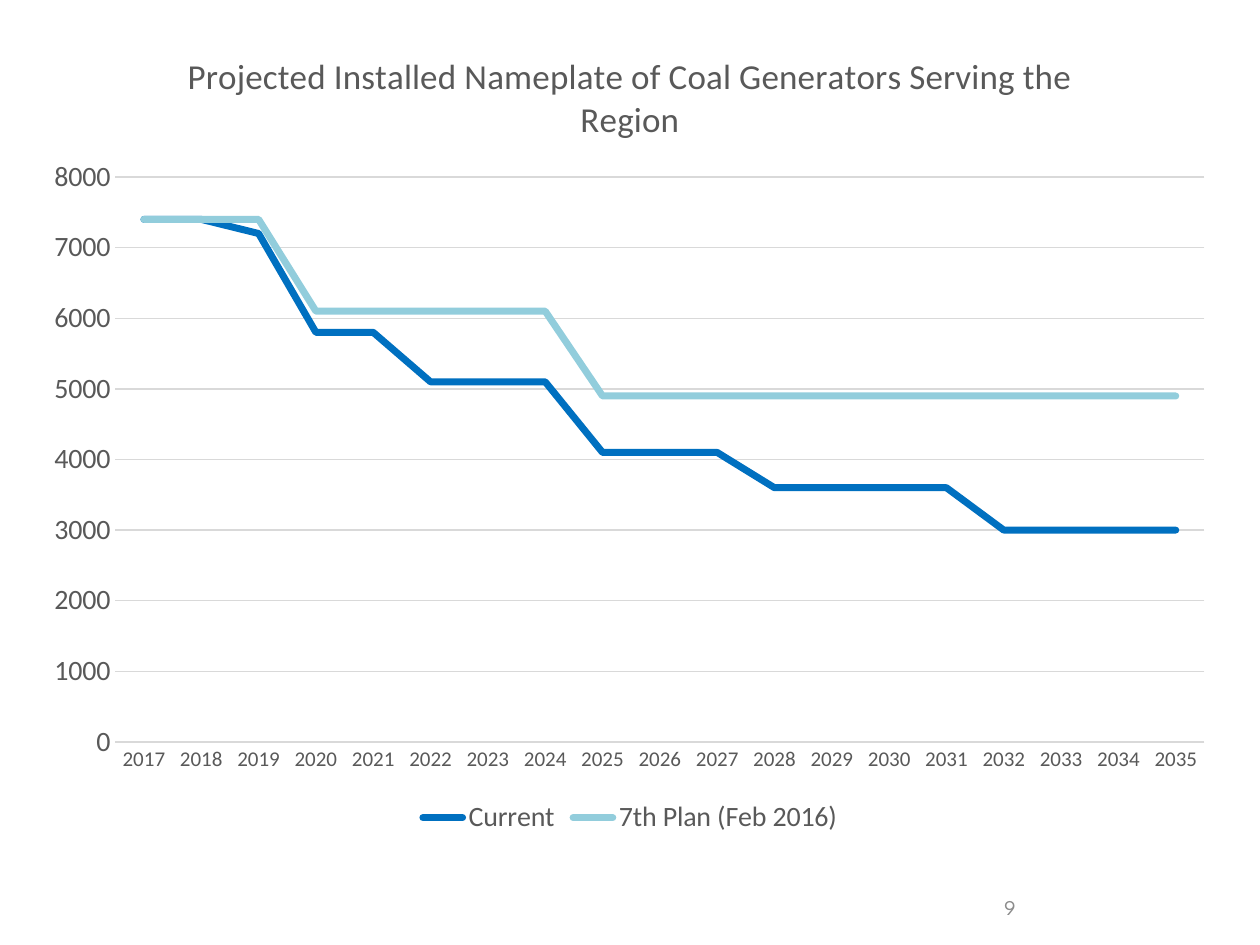
from lxml import etree
from pptx import Presentation
from pptx.chart.data import CategoryChartData
from pptx.dml.color import RGBColor
from pptx.enum.chart import XL_CHART_TYPE, XL_LEGEND_POSITION, XL_TICK_MARK
from pptx.enum.text import MSO_ANCHOR, PP_ALIGN
from pptx.oxml.ns import qn
from pptx.util import Inches, Pt

BLUE = RGBColor(0x00, 0x70, 0xC0)
AQUA = RGBColor(0x92, 0xCD, 0xDC)
TEXT = RGBColor(0x59, 0x59, 0x59)
GRID = RGBColor(0xD9, 0xD9, 0xD9)
GREY = RGBColor(0x8C, 0x8C, 0x8C)

YEARS = [str(year) for year in range(2017, 2036)]
# Each series: name, colour, (capacity, number of years it holds)
SERIES = [
    ("Current", BLUE,
     [(7400, 2), (7200, 1), (5800, 2), (5100, 3), (4100, 3), (3600, 4), (3000, 4)]),
    ("7th Plan (Feb 2016)", AQUA, [(7400, 3), (6100, 5), (4900, 11)]),
]


def style_font(font, size, color=TEXT, name="Calibri"):
    font.name = name
    font.size = Pt(size)
    font.bold = False
    font.color.rgb = color


def style_line(line, color, width):
    line.color.rgb = color
    line.width = Pt(width)


def place_plot(chart, x, y, w, h):
    """Fix the inner plot area, in fractions of the chart box."""
    plot_area = chart._chartSpace.chart.plotArea
    for old in plot_area.findall(qn("c:layout")):
        plot_area.remove(old)
    layout = etree.Element(qn("c:layout"))
    manual = etree.SubElement(layout, qn("c:manualLayout"))
    settings = [("layoutTarget", "inner"), ("xMode", "edge"), ("yMode", "edge"),
                ("x", x), ("y", y), ("w", w), ("h", h)]
    for tag, value in settings:
        etree.SubElement(manual, qn(f"c:{tag}")).set("val", str(value))
    plot_area.insert(0, layout)


def add_capacity_chart(slide, left, top, width, height):
    data = CategoryChartData(number_format="0")
    data.categories = YEARS
    for name, _, steps in SERIES:
        data.add_series(name, [mw for mw, years in steps for _ in range(years)])
    chart = slide.shapes.add_chart(
        XL_CHART_TYPE.LINE, left, top, width, height, data).chart
    style_font(chart.font, 10)

    # Title
    chart.has_title = True
    p = chart.chart_title.text_frame.paragraphs[0]
    r = p.add_run()
    r.text = "Projected Installed Nameplate of Coal Generators Serving the Region"
    style_font(r.font, 20)
    chart.chart_title.include_in_layout = False

    # Axes
    for axis, size in ((chart.category_axis, 12), (chart.value_axis, 16)):
        axis.major_tick_mark = axis.minor_tick_mark = XL_TICK_MARK.NONE
        style_font(axis.tick_labels.font, size)
    style_line(chart.category_axis.format.line, GRID, 0.75)
    values = chart.value_axis
    values.minimum_scale, values.maximum_scale, values.major_unit = 0, 8000, 1000
    values.tick_labels.number_format = "0"
    values.tick_labels.number_format_is_linked = False
    values.format.line.fill.background()
    style_line(values.major_gridlines.format.line, GRID, 0.75)

    # Lines
    chart.plots[0].vary_by_categories = False
    for s, (_, color, _) in zip(chart.plots[0].series, SERIES):
        s.smooth = False
        style_line(s.format.line, color, 4)
        s.format.line._get_or_add_ln().set("cap", "rnd")

    # Legend and plot position
    chart.has_legend = True
    chart.legend.position = XL_LEGEND_POSITION.BOTTOM
    chart.legend.include_in_layout = False
    style_font(chart.legend.font, 16)
    place_plot(chart, 0.07, 0.19, 0.91, 0.69)


def add_page_number(slide, left, top, width, height):
    tf = slide.shapes.add_textbox(left, top, width, height).text_frame
    tf.word_wrap = True
    tf.vertical_anchor = MSO_ANCHOR.MIDDLE
    p = tf.paragraphs[0]
    p.alignment = PP_ALIGN.RIGHT
    r = p.add_run()
    r.text = "9"
    style_font(r.font, 12, GREY, "League Spartan")


def main():
    prs = Presentation()
    prs.slide_width, prs.slide_height = Inches(10), Inches(7.5)
    slide = prs.slides.add_slide(prs.slide_layouts[6])
    add_page_number(slide, Inches(5.83), Inches(7), Inches(2.33), Inches(0.4))
    add_capacity_chart(slide, Inches(0.25), Inches(0.17), Inches(9.5), Inches(6.5))
    prs.save("out.pptx")


if __name__ == "__main__":
    main()
